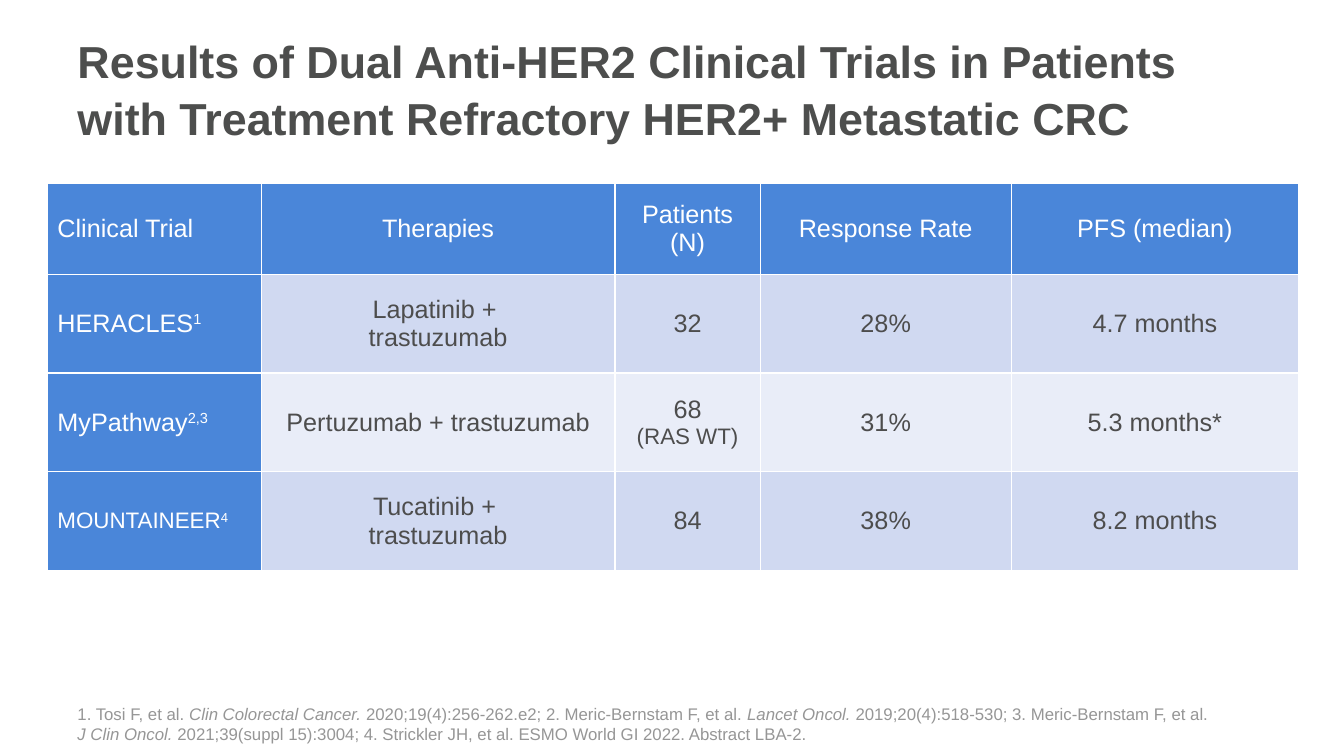
from lxml.etree import SubElement
from pptx import Presentation
from pptx.dml.color import RGBColor
from pptx.enum.text import MSO_ANCHOR as Anchor, PP_ALIGN as Align
from pptx.oxml.ns import qn
from pptx.util import Inches, Pt

WHITE, BLUE, DARK, GRAY = "FFFFFF", "4A86D9", "4D4D4D", "969696"
BANDS = ["D0D9F1", "E9EDF8"]
COLUMNS = [2.12, 3.51, 1.44, 2.49, 2.85]
ROWS = [0.9, 0.98, 0.98, 0.98]

TITLE = ("Results of Dual Anti-HER2 Clinical Trials in Patients "
         "with Treatment Refractory HER2+ Metastatic CRC")

REFERENCES = [
    ("1. Tosi F, et al. ", {}),
    ("Clin Colorectal Cancer. ", {"italic": True}),
    ("2020;19(4):256-262.e2; 2. Meric-Bernstam F, et al. ", {}),
    ("Lancet Oncol. ", {"italic": True}),
    ("2019;20(4):518-530; 3. Meric-Bernstam F, et al. ", {}),
    ("J Clin Oncol.", {"italic": True}),
    (" 2021;39(suppl 15):3004; 4. Strickler JH, et al. "
     "ESMO World GI 2022. Abstract LBA-2.", {}),
]

SMALL = {"size": Pt(16)}
RAISED = {"raised": True}


def plain(*lines):
    return [[(line, {})] for line in lines]


def trial(name, note, style=None):
    style = style or {}
    return [[(name, style), (note, {**style, **RAISED})]]


TRIALS = [
    [plain("Clinical Trial"), plain("Therapies"), plain("Patients", "(N)"),
     plain("Response Rate"), plain("PFS (median)")],
    [trial("HERACLES", "1"), plain("Lapatinib + ", "trastuzumab"),
     plain("32"), plain("28%"), plain("4.7 months")],
    [trial("MyPathway", "2,3"), plain("Pertuzumab + trastuzumab"),
     [[("68", {})], [("(RAS WT)", SMALL)]], plain("31%"), plain("5.3 months*")],
    [trial("MOUNTAINEER", "4", SMALL), plain("Tucatinib + ", "trastuzumab"),
     plain("84"), plain("38%"), plain("8.2 months")],
]


def rgb(value):
    return RGBColor.from_string(value)


def write(frame, lines, color, align=Align.LEFT, spacing=None, **base):
    for index, spans in enumerate(lines):
        para = frame.paragraphs[0] if index == 0 else frame.add_paragraph()
        para.alignment = align
        para.line_spacing = spacing
        for text, style in spans:
            span = para.add_run()
            span.text = text
            span.font.color.rgb = rgb(color)
            for name, value in {"name": "Arial", **base, **style}.items():
                if name == "raised":
                    span._r.get_or_add_rPr().set("baseline", "30000")
                else:
                    setattr(span.font, name, value)


def add_text(page, box, anchor, lines, color, **style):
    frame = page.shapes.add_textbox(*map(Inches, box)).text_frame
    frame.word_wrap = True
    frame.vertical_anchor = anchor
    write(frame, lines, color, **style)


def add_borders(cell):
    properties = cell._tc.get_or_add_tcPr()
    for side in ("lnL", "lnR", "lnT", "lnB"):
        line = SubElement(properties, qn(f"a:{side}"), w=str(Pt(1)))
        fill = SubElement(line, qn("a:solidFill"))
        SubElement(fill, qn("a:srgbClr"), val=WHITE)


def add_trials(page, left, top):
    box = map(Inches, (left, top, sum(COLUMNS), sum(ROWS)))
    table = page.shapes.add_table(len(ROWS), len(COLUMNS), *box).table
    for column, width in zip(table.columns, COLUMNS):
        column.width = Inches(width)
    for row, height in zip(table.rows, ROWS):
        row.height = Inches(height)
    for r, entries in enumerate(TRIALS):
        for c, lines in enumerate(entries):
            cell = table.cell(r, c)
            heading = r == 0 or c == 0
            add_borders(cell)
            cell.fill.solid()
            cell.fill.fore_color.rgb = rgb(BLUE if heading else BANDS[(r - 1) % 2])
            cell.vertical_anchor = Anchor.MIDDLE
            cell.margin_top = cell.margin_bottom = 0
            write(cell.text_frame, lines, WHITE if heading else DARK,
                  Align.CENTER if c else Align.LEFT, size=Pt(18), bold=False)


def main():
    deck = Presentation()
    deck.slide_width, deck.slide_height = Inches(13.33), Inches(7.5)
    page = deck.slides.add_slide(deck.slide_layouts[6])
    add_text(page, (0.67, 0.22, 11.75, 1.3), Anchor.MIDDLE, plain(TITLE),
             "4D4E4D", spacing=1.05, size=Pt(32), bold=True)
    add_text(page, (0.67, 6.95, 11.44, 0.48), Anchor.BOTTOM, [REFERENCES],
             GRAY, size=Pt(12))
    add_trials(page, 0.47, 1.82)
    deck.save("out.pptx")


if __name__ == "__main__":
    main()
